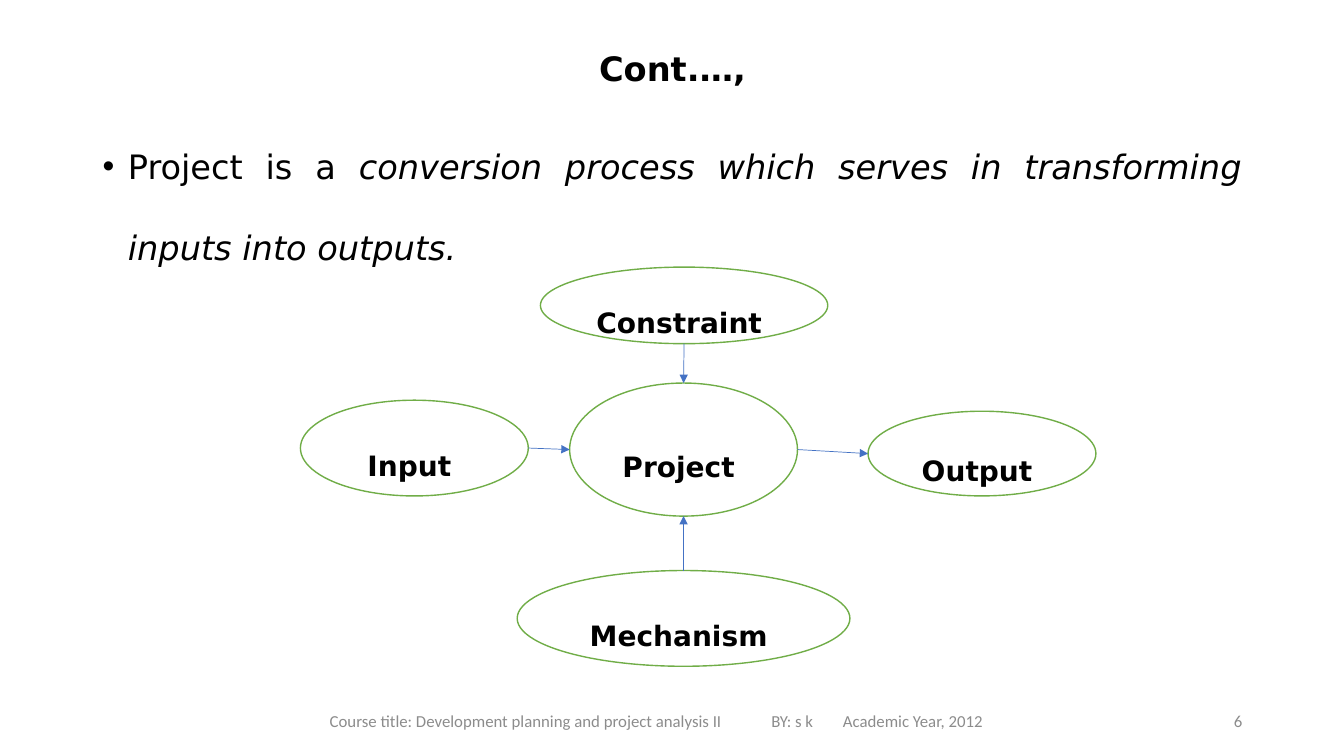
from dataclasses import dataclass

from lxml import etree
from pptx import Presentation
from pptx.dml.color import RGBColor
from pptx.enum.shapes import MSO_CONNECTOR, MSO_SHAPE
from pptx.enum.text import MSO_ANCHOR as Anchor, MSO_AUTO_SIZE, PP_ALIGN as Align
from pptx.oxml.ns import qn
from pptx.util import Emu, Pt

EMU_PER_PX = 9144  # 100 px to the inch
TITLE_ONLY = 5


@dataclass(frozen=True)
class Theme:
    ink: str = "000000"
    paper: str = "FFFFFF"
    muted: str = "8C8C8C"
    outline: str = "70AD47"
    arrow: str = "4472C4"
    main_font: str = "DejaVu Sans"
    small_font: str = "Calibri"
    large: int = 24
    label: int = 20
    small: int = 12


def px(value):
    return Emu(round(value * EMU_PER_PX))


def add_element(parent, tag, **attributes):
    child = etree.SubElement(parent, qn(tag))
    for name, value in attributes.items():
        child.set(name, str(value))
    return child


class SlideBuilder:
    def __init__(self, deck, theme):
        self.theme = theme
        self.page = deck.slides.add_slide(deck.slide_layouts[TITLE_ONLY])

    def set_text(self, frame, spans, size, align, spacing=1.0, anchor=Anchor.MIDDLE,
                 color=None, font=None):
        """Fill the first paragraph with (text, bold, italic) spans."""
        frame.word_wrap = True
        frame.auto_size = MSO_AUTO_SIZE.NONE
        frame.vertical_anchor = anchor
        para = frame.paragraphs[0]
        para.alignment = align
        para.line_spacing = spacing
        for text, bold, italic in spans:
            span = para.add_run()
            span.text = text
            span.font.name = font or self.theme.main_font
            span.font.size = Pt(size)
            span.font.bold = bold
            span.font.italic = italic
            span.font.color.rgb = RGBColor.from_string(color or self.theme.ink)

    def title(self, text, left, top, width, height):
        shape = self.page.shapes.title
        shape.left, shape.top = px(left), px(top)
        shape.width, shape.height = px(width), px(height)
        self.set_text(shape.text_frame, [(text, True, False)], self.theme.large,
                      Align.CENTER, spacing=0.9)

    def text_box(self, left, top, width, height):
        return self.page.shapes.add_textbox(
            px(left), px(top), px(width), px(height)).text_frame

    def bullet(self, spans, left, top, width, height, indent):
        frame = self.text_box(left, top, width, height)
        properties = frame.paragraphs[0]._p.get_or_add_pPr()
        properties.set("marL", str(px(indent)))
        properties.set("indent", str(-px(indent)))
        add_element(properties, "a:buFont", typeface="Arial")
        add_element(properties, "a:buChar", char="•")
        self.set_text(frame, spans, self.theme.large, Align.JUSTIFY, spacing=2.0,
                      anchor=Anchor.TOP)

    def small_print(self, text, left, top, width, height, align, inset=10, tabs=()):
        frame = self.text_box(left, top, width, height)
        frame.margin_left = px(inset)
        if tabs:
            properties = frame.paragraphs[0]._p.get_or_add_pPr()
            stops = add_element(properties, "a:tabLst")
            for stop in tabs:
                add_element(stops, "a:tab", pos=px(stop), algn="l")
        self.set_text(frame, [(text, False, False)], self.theme.small, align,
                      color=self.theme.muted, font=self.theme.small_font)

    def oval(self, text, left, top, width, height):
        shape = self.page.shapes.add_shape(
            MSO_SHAPE.OVAL, px(left), px(top), px(width), px(height))
        shape.shadow.inherit = False
        shape.fill.solid()
        shape.fill.fore_color.rgb = RGBColor.from_string(self.theme.paper)
        shape.line.color.rgb = RGBColor.from_string(self.theme.outline)
        shape.line.width = Pt(1)
        self.set_text(shape.text_frame, [(text, True, False)], self.theme.label,
                      Align.CENTER, spacing=2.0)
        return shape

    def arrow(self, source, source_side, target, target_side):
        start = edge_point(source, source_side)
        end = edge_point(target, target_side)
        connector = self.page.shapes.add_connector(MSO_CONNECTOR.STRAIGHT, *start, *end)
        connector.line.color.rgb = RGBColor.from_string(self.theme.arrow)
        connector.line.width = Pt(0.5)
        properties = connector._element.spPr
        add_element(properties.find(qn("a:ln")), "a:tailEnd", type="triangle")
        add_element(properties, "a:effectLst")


def edge_point(shape, side):
    """Middle of one side of a shape's frame, in EMU."""
    across, down = {"top": (0.5, 0), "bottom": (0.5, 1),
                    "left": (0, 0.5), "right": (1, 0.5)}[side]
    return (Emu(round(shape.left + shape.width * across)),
            Emu(round(shape.top + shape.height * down)))


def main():
    deck = Presentation()
    deck.slide_width, deck.slide_height = px(1333), px(750)
    slide = SlideBuilder(deck, Theme())

    slide.title("Cont.…,", 92, 40, 1150, 60)
    slide.bullet([("Project is a ", False, False),
                  ("conversion process which serves in transforming inputs into outputs. ",
                   False, True)],
                 92, 100, 1150, 576, indent=25)

    project = slide.oval("Project ", 565, 380, 226, 132)
    constraint = slide.oval("Constraint ", 536, 265, 285, 76)
    inputs = slide.oval("Input ", 298, 397, 226, 95)
    outputs = slide.oval("Output ", 861, 408, 226, 84)
    mechanism = slide.oval("Mechanism ", 513, 566, 330, 95)

    slide.arrow(inputs, "right", project, "left")
    slide.arrow(constraint, "bottom", project, "top")
    slide.arrow(mechanism, "top", project, "bottom")
    slide.arrow(project, "right", outputs, "left")

    slide.small_print("Course title: Development planning and project analysis II"
                      "\tBY: s k\tAcademic Year, 2012",
                      220, 695, 878, 40, Align.LEFT, inset=107, tabs=(438, 509))
    slide.small_print("6", 942, 695, 300, 40, Align.RIGHT)
    deck.save("out.pptx")


if __name__ == "__main__":
    main()
